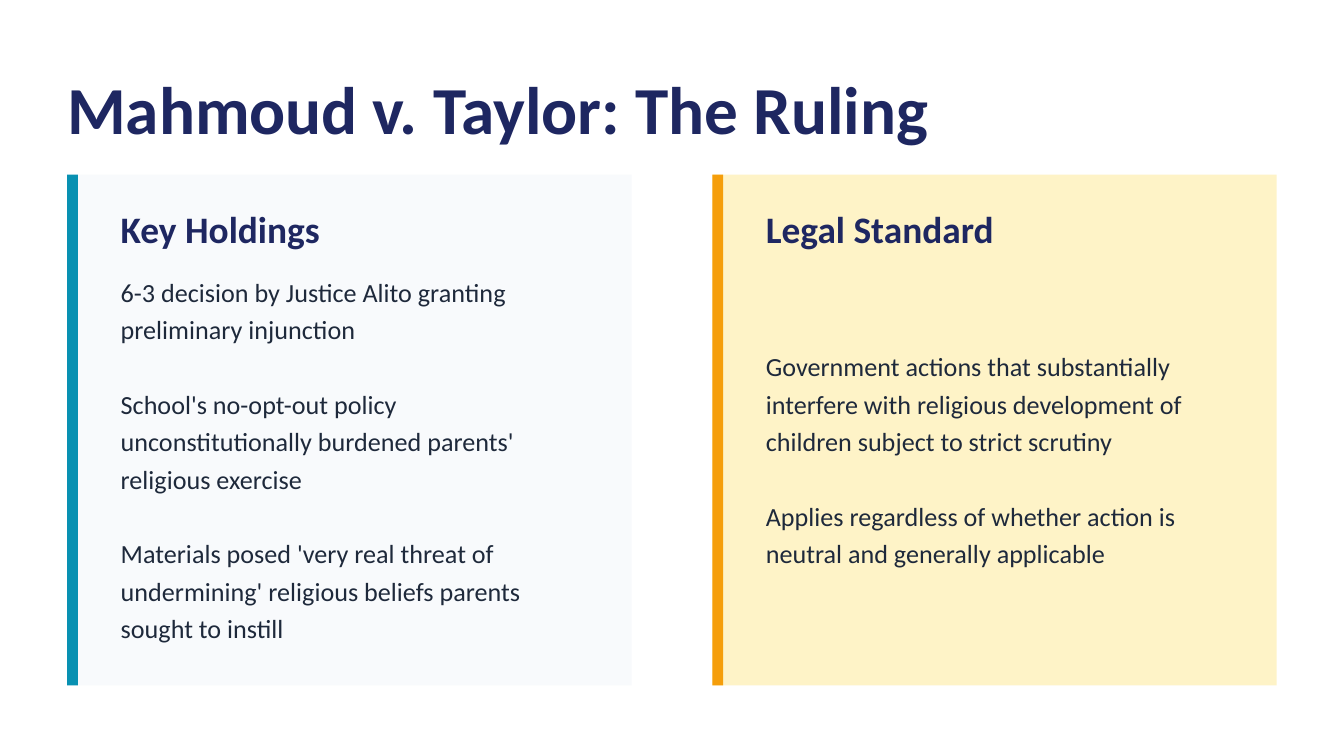
from pptx import Presentation
from pptx.dml.color import RGBColor
from pptx.enum.shapes import MSO_SHAPE as Shape
from pptx.enum.text import MSO_ANCHOR as Anchor
from pptx.util import Inches, Pt

COLORS = {
    "navy": "1E2761",
    "body": "1E293B",
    "white": "FFFFFF",
    "pale_gray": "F8FAFC",
    "teal": "0891B2",
    "pale_yellow": "FEF3C7",
    "amber": "F59E0B",
}


def rgb(color):
    return RGBColor.from_string(COLORS[color])


class RulingSlide:
    font_name = "Calibri"
    line_pitch = Pt(20)
    card_top, card_width, card_height = 1.3, 4.2, 3.8

    def __init__(self, deck):
        self.slide = deck.slides.add_slide(deck.slide_layouts[6])
        background = self.slide.background.fill
        background.solid()
        background.fore_color.rgb = rgb("white")

    def rect(self, left, top, width, height, color):
        box = self.slide.shapes.add_shape(
            Shape.RECTANGLE, Inches(left), Inches(top), Inches(width), Inches(height))
        box.shadow.inherit = False
        box.fill.solid()
        box.fill.fore_color.rgb = rgb(color)
        box.line.fill.background()

    def text(self, left, top, width, height, lines, size, color, bold=False):
        frame = self.slide.shapes.add_textbox(
            Inches(left), Inches(top), Inches(width), Inches(height)).text_frame
        frame.word_wrap = True
        frame.vertical_anchor = Anchor.MIDDLE
        frame.text = "\n".join(lines)
        for paragraph in frame.paragraphs:
            font = paragraph.font
            font.name, font.size, font.bold = self.font_name, Pt(size), bold
            font.color.rgb = rgb(color)
        return frame

    def title(self, wording):
        frame = self.text(0.5, 0.5, 9, 0.6, [wording], 36, "navy", bold=True)
        frame.margin_left = frame.margin_right = 0
        frame.margin_top = frame.margin_bottom = 0

    def card(self, left, fill, accent, heading, points):
        # Panel with an accent bar on its left edge
        self.rect(left, self.card_top, self.card_width, self.card_height, fill)
        self.rect(left, self.card_top, 0.08, self.card_height, accent)
        # Heading, then points set one line apart
        self.text(left + 0.3, 1.5, 3.5, 0.4, [heading], 20, "navy", bold=True)
        body = self.text(left + 0.3, 2, 3.5, 2.8, points, 14, "body")
        for index, paragraph in enumerate(body.paragraphs):
            paragraph.line_spacing = self.line_pitch
            if index:
                paragraph.space_before = self.line_pitch


def main():
    # Widescreen page, 16:9
    deck = Presentation()
    deck.slide_width = Inches(10)
    deck.slide_height = Inches(10 * 9 / 16)

    ruling = RulingSlide(deck)
    ruling.title("Mahmoud v. Taylor: The Ruling")

    # Left card: what the court held
    ruling.card(0.5, "pale_gray", "teal", "Key Holdings", [
        "6-3 decision by Justice Alito granting preliminary injunction",
        "School's no-opt-out policy unconstitutionally burdened parents' religious exercise",
        "Materials posed 'very real threat of undermining' religious beliefs parents "
        "sought to instill",
    ])

    # Right card: the test it applied
    ruling.card(5.3, "pale_yellow", "amber", "Legal Standard", [
        "Government actions that substantially interfere with religious development "
        "of children subject to strict scrutiny",
        "Applies regardless of whether action is neutral and generally applicable",
    ])

    deck.save("out.pptx")


if __name__ == "__main__":
    main()
